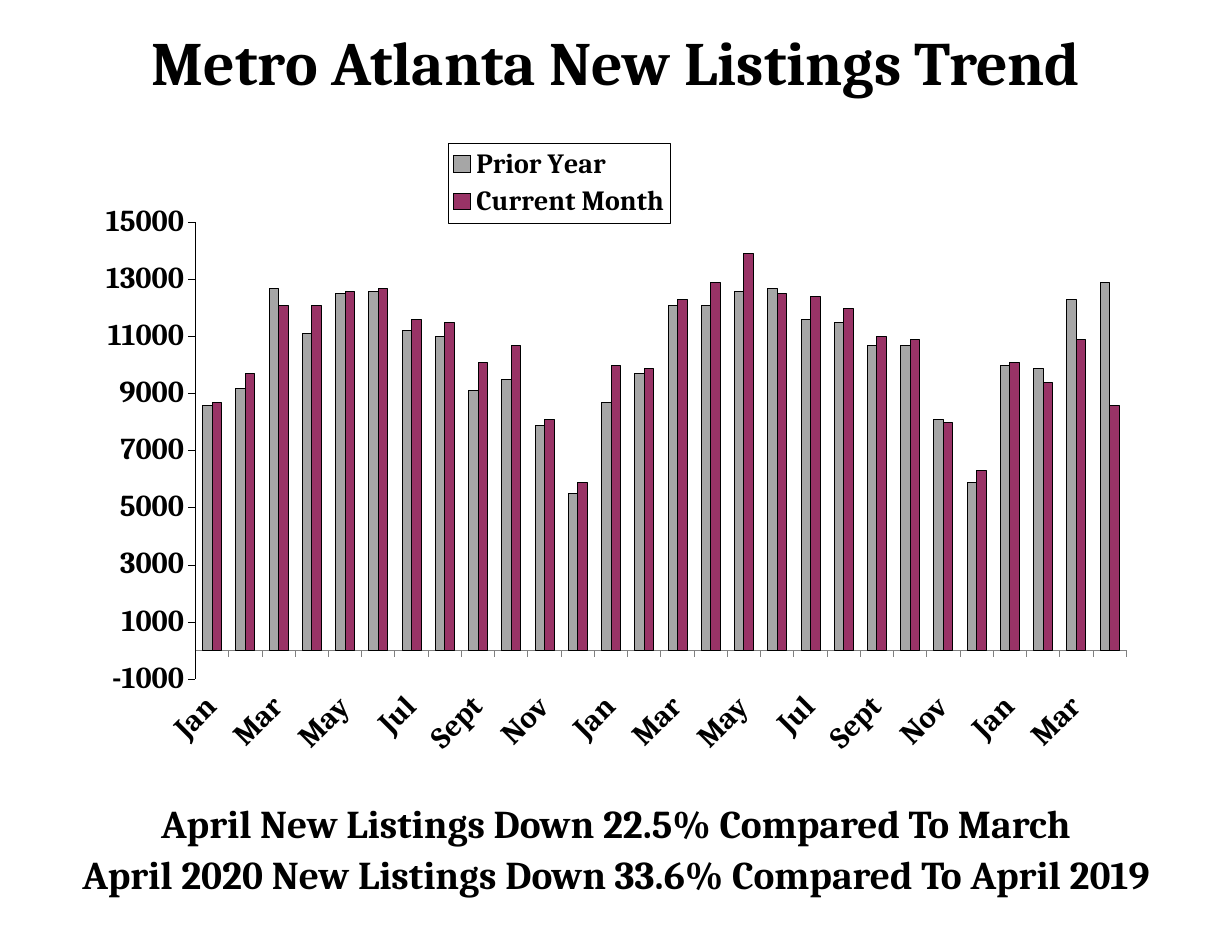
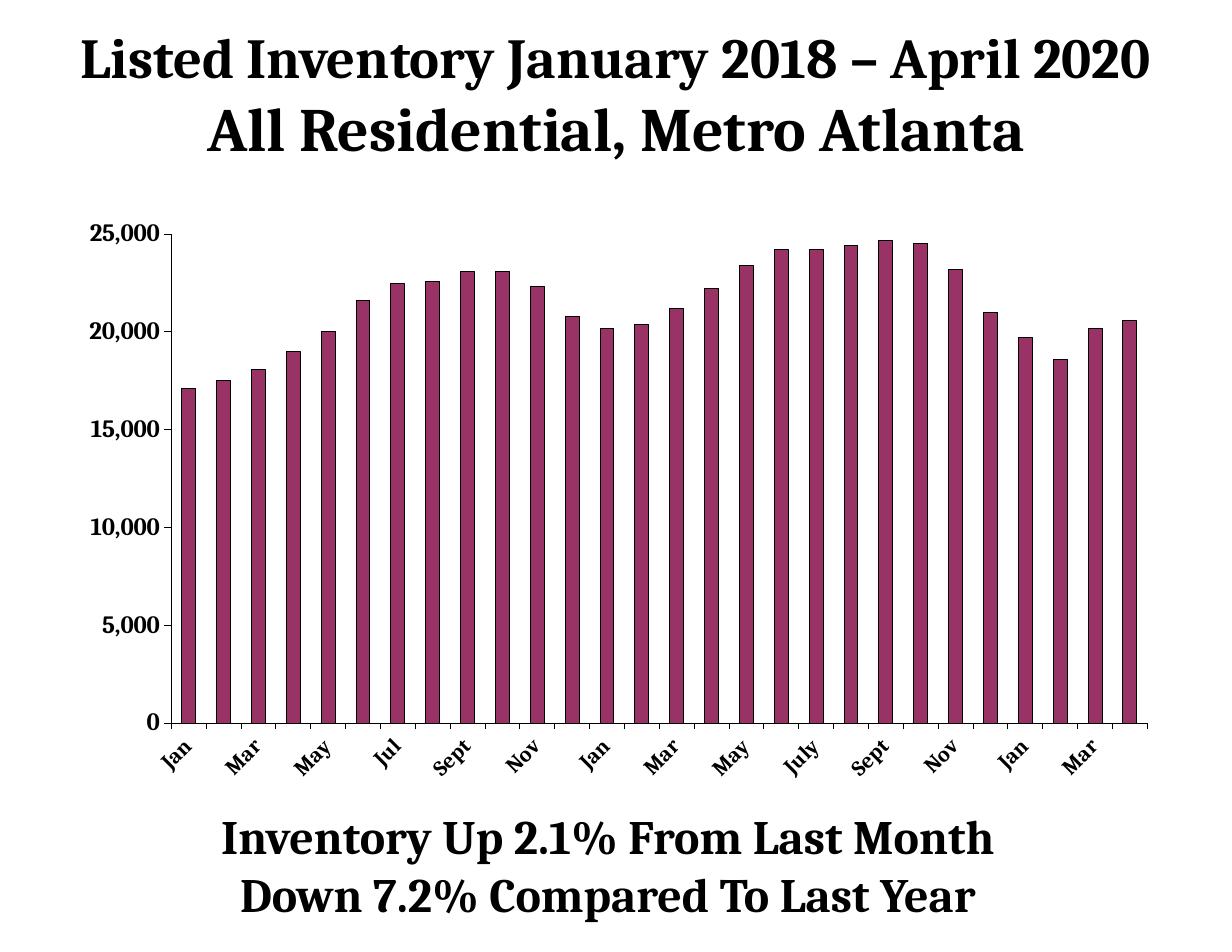
from dataclasses import dataclass

from lxml import etree
from pptx import Presentation
from pptx import util as u
from pptx.chart.data import CategoryChartData
from pptx.dml.color import RGBColor
from pptx.enum import chart as charts, text
from pptx.oxml import parse_xml
from pptx.oxml.ns import nsdecls, qn


@dataclass(frozen=True)
class Theme:
    font: str = "Cambria"
    ink: RGBColor = RGBColor(0x00, 0x00, 0x00)
    baseline: RGBColor = RGBColor(0x80, 0x80, 0x80)
    prior: RGBColor = RGBColor(0xA6, 0xA6, 0xA6)
    current: RGBColor = RGBColor(0x99, 0x33, 0x66)
    title: float = 39.6
    long_title: float = 36.3
    trend_note: float = 25.3
    inventory_note: float = 30.8
    trend_axis: float = 19.5
    legend: float = 17.9
    value_axis: float = 16
    month_axis: float = 14
    hairline: float = 0.03


THEME = Theme()
SLIDE_WIDTH, SLIDE_HEIGHT = 27.94, 21.59
MONTHS = ["Jan", "Feb", "Mar", "Apr", "May", "Jun", "Jul", "Aug", "Sept", "Oct", "Nov", "Dec"]
TREND_MONTHS = MONTHS * 2 + MONTHS[:4]
LONG_NAMES = {17: "June", 18: "July"}
INVENTORY_MONTHS = [LONG_NAMES.get(i, month) for i, month in enumerate(TREND_MONTHS)]

PRIOR_YEAR = [
    8600, 9200, 12700, 11100, 12500, 12600, 11200, 11000, 9100, 9500, 7900, 5500,
    8700, 9700, 12100, 12100, 12600, 12700, 11600, 11500, 10700, 10700, 8100, 5900,
    10000, 9900, 12300, 12900]
CURRENT_MONTH = [
    8700, 9700, 12100, 12100, 12600, 12700, 11600, 11500, 10100, 10700, 8100, 5900,
    10000, 9900, 12300, 12900, 13900, 12500, 12400, 12000, 11000, 10900, 8000, 6300,
    10100, 9400, 10900, 8600]
INVENTORY = [
    17100, 17500, 18100, 19000, 20000, 21600, 22500, 22600, 23100, 23100, 22300, 20800,
    20200, 20400, 21200, 22200, 23400, 24200, 24200, 24400, 24700, 24500, 23200, 21000,
    19700, 18600, 20200, 20600]


def style_font(font, size):
    font.name = THEME.font
    font.size = u.Pt(size)
    font.bold = True
    font.color.rgb = THEME.ink


def style_line(line, color=THEME.ink):
    line.color.rgb = color
    line.width = u.Pt(THEME.hairline)


def add_centred_lines(slide, middle, lines, width=SLIDE_WIDTH, pitch=None):
    """Centre (wording, size) lines around the height `middle`, in cm."""
    height = 3
    box = slide.shapes.add_textbox(u.Cm(0), u.Cm(middle - height / 2), u.Cm(width), u.Cm(height))
    frame = box.text_frame
    frame.word_wrap = True
    frame.vertical_anchor = text.MSO_ANCHOR.MIDDLE
    frame.margin_left = frame.margin_right = frame.margin_top = frame.margin_bottom = 0
    for i, (wording, size) in enumerate(lines):
        paragraph = frame.add_paragraph() if i else frame.paragraphs[0]
        paragraph.text = wording
        paragraph.alignment = text.PP_ALIGN.CENTER
        style_font(paragraph.font, size)
        if pitch:
            paragraph.line_spacing = u.Pt(pitch)


def manual_layout(x, y, w, h, inner=False):
    target = '<c:layoutTarget val="inner"/>' if inner else ""
    sizes = "".join(f'<c:{key} val="{value}"/>' for key, value in zip("xywh", (x, y, w, h)))
    return parse_xml(
        f'<c:layout {nsdecls("c")}><c:manualLayout>{target}<c:xMode val="edge"/>'
        f'<c:yMode val="edge"/>{sizes}</c:manualLayout></c:layout>')


def drop_layout(element):
    for layout in element.findall(qn("c:layout")):
        element.remove(layout)


def style_months(axis, size, line_color):
    axis.has_major_gridlines = False
    axis.major_tick_mark = charts.XL_TICK_MARK.OUTSIDE
    axis.tick_label_position = charts.XL_TICK_LABEL_POSITION.LOW
    style_line(axis.format.line, line_color)
    style_font(axis.tick_labels.font, size)
    element = axis._element
    element.find(f'{qn("c:txPr")}/{qn("a:bodyPr")}').set("rot", "-2700000")
    skip = etree.Element(qn("c:tickLblSkip"), val="2")
    element.find(qn("c:noMultiLvlLbl")).addprevious(skip)


def style_values(axis, size, low, high, step, number_format):
    axis.has_major_gridlines = False
    axis.major_tick_mark = charts.XL_TICK_MARK.OUTSIDE
    axis.minimum_scale, axis.maximum_scale, axis.major_unit = low, high, step
    style_line(axis.format.line)
    style_font(axis.tick_labels.font, size)
    axis.tick_labels.number_format = number_format
    axis.tick_labels.number_format_is_linked = False


def add_columns(slide, place, months, series, plot_area):
    """Add clustered columns; series holds (name, values, colour)."""
    data = CategoryChartData()
    data.categories = months
    for name, values, _ in series:
        data.add_series(name, values)
    chart = slide.shapes.add_chart(
        charts.XL_CHART_TYPE.COLUMN_CLUSTERED, *map(u.Cm, place), data).chart
    chart.has_title = False
    chart.has_legend = False
    style_font(chart.font, THEME.month_axis)
    columns = chart.plots[0]
    columns.gap_width = 150
    columns.overlap = 0
    columns.vary_by_categories = False
    for column, (_, _, color) in zip(columns.series, series):
        column.invert_if_negative = False
        column.format.fill.solid()
        column.format.fill.fore_color.rgb = color
        style_line(column.format.line)
    area = chart._chartSpace.chart.plotArea
    drop_layout(area)
    area.insert(0, manual_layout(*plot_area, inner=True))
    return chart


def add_boxed_legend(chart, place):
    chart.has_legend = True
    legend = chart.legend
    legend.position = charts.XL_LEGEND_POSITION.RIGHT
    legend.include_in_layout = False
    style_font(legend.font, THEME.legend)
    element = legend._element
    drop_layout(element)
    element.find(qn("c:legendPos")).addnext(manual_layout(*place))
    element.find(qn("c:overlay")).addnext(parse_xml(
        f'<c:spPr {nsdecls("c", "a")}><a:ln w="{u.Pt(THEME.hairline)}"><a:solidFill>'
        f'<a:srgbClr val="{THEME.ink}"/></a:solidFill></a:ln></c:spPr>'))


def add_listings_trend(slide):
    add_centred_lines(slide, 1.37, [("Metro Atlanta New Listings Trend", THEME.title)])
    chart = add_columns(
        slide, (1.73, 2.97, 24.49, 14.76), TREND_MONTHS,
        [("Prior Year", PRIOR_YEAR, THEME.prior),
         ("Current Month", CURRENT_MONTH, THEME.current)],
        (0.11, 0.14, 0.862, 0.702))
    style_months(chart.category_axis, THEME.trend_axis, THEME.baseline)
    style_values(chart.value_axis, THEME.trend_axis, -1000, 15000, 2000, "General")
    add_boxed_legend(chart, (0.344, 0.018, 0.206, 0.123))
    add_centred_lines(slide, 19.2, [
        ("April New Listings Down 22.5% Compared To March", THEME.trend_note),
        ("April 2020 New Listings Down 33.6% Compared To April 2019", THEME.trend_note)],
        pitch=32.8)


def add_listed_inventory(slide):
    add_centred_lines(slide, 2.1, [
        ("Listed Inventory January 2018 – April 2020", THEME.long_title),
        ("All Residential, Metro Atlanta", THEME.title)])
    chart = add_columns(
        slide, (1.17, 3.94, 25.27, 15.47), INVENTORY_MONTHS,
        [("Series 1", INVENTORY, THEME.current)], (0.107, 0.088, 0.876, 0.717))
    style_months(chart.category_axis, THEME.month_axis, THEME.ink)
    style_values(chart.value_axis, THEME.value_axis, 0, 25000, 5000, "#,##0")
    add_centred_lines(slide, 19.6, [
        ("Inventory Up 2.1% From Last Month", THEME.inventory_note),
        ("Down 7.2% Compared To Last Year", THEME.inventory_note)], width=27.58)


def main():
    deck = Presentation()
    deck.slide_width, deck.slide_height = u.Cm(SLIDE_WIDTH), u.Cm(SLIDE_HEIGHT)
    for fill_slide in (add_listings_trend, add_listed_inventory):
        fill_slide(deck.slides.add_slide(deck.slide_layouts[6]))
    deck.save("out.pptx")


if __name__ == "__main__":
    main()
